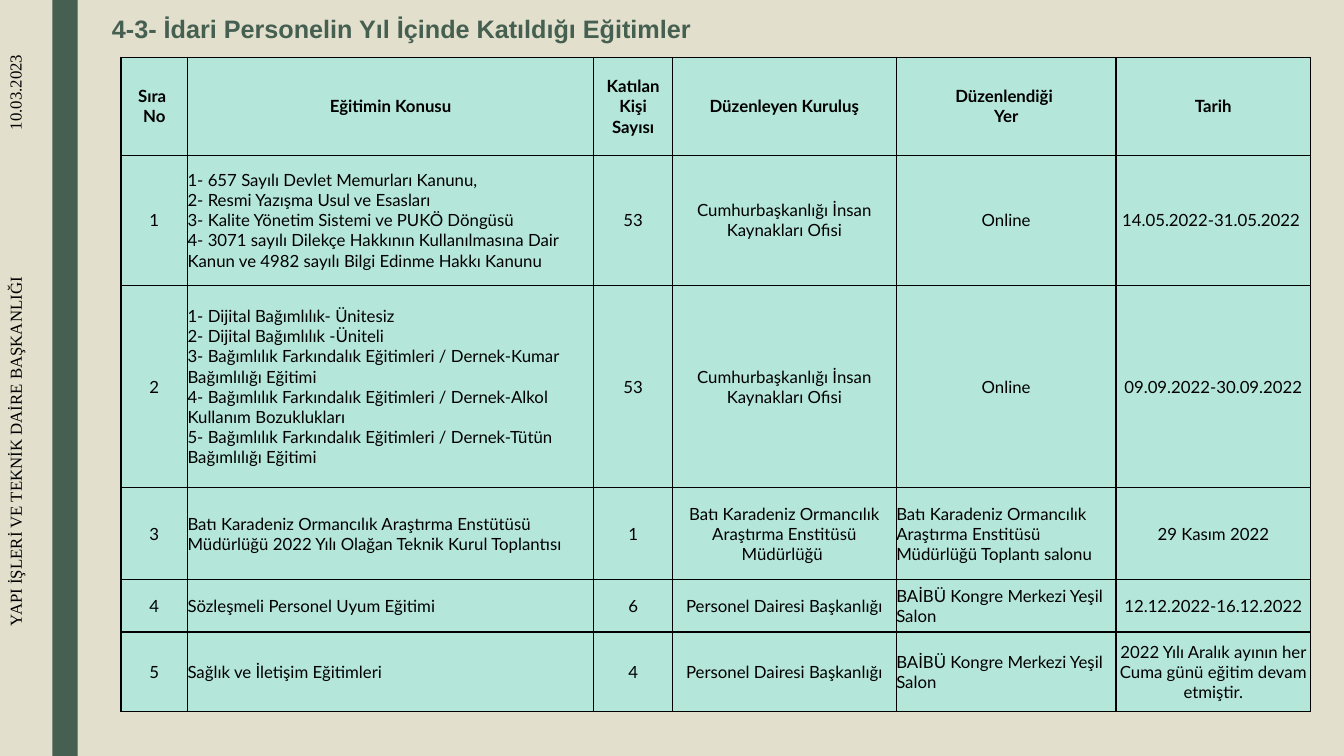
from lxml import etree
from pptx import Presentation, util as u
from pptx.dml.color import RGBColor
from pptx.enum import shapes, text
from pptx.oxml import ns

WIDTH, HEIGHT = u.Inches(13.33), u.Inches(7.5)
GREEN, MINT, SAND, BLACK = "455F51", "B4E6DA", "E2DFCC", "000000"
COLUMNS = [0.66, 4.03, 0.78, 2.22, 2.18, 1.93]
ROWS = [0.97, 1.29, 2.01, 0.91, 0.52, 0.79]

OFFICE = "Cumhurbaşkanlığı İnsan Kaynakları Ofisi"
PERSONNEL = "Personel Dairesi Başkanlığı"
HALL = "BAİBÜ Kongre Merkezi Yeşil Salon"
INSTITUTE = "Batı Karadeniz Ormancılık Araştırma Enstitüsü Müdürlüğü "
HEADER = ["Sıra \nNo", "Eğitimin Konusu", "Katılan\nKişi\nSayısı",
          "Düzenleyen Kuruluş", "Düzenlendiği \nYer", "Tarih"]
TRAININGS = [
    ["1", "1- 657 Sayılı Devlet Memurları Kanunu,\n"
          "2- Resmi Yazışma Usul ve Esasları\n"
          "3- Kalite Yönetim Sistemi ve PUKÖ Döngüsü\n"
          "4- 3071 sayılı Dilekçe Hakkının Kullanılmasına Dair Kanun ve "
          "4982 sayılı Bilgi Edinme Hakkı Kanunu",
     "53", OFFICE, "Online", "14.05.2022-31.05.2022 "],
    ["2", "1- Dijital Bağımlılık- Ünitesiz\n"
          "2- Dijital Bağımlılık -Üniteli\n"
          "3- Bağımlılık Farkındalık Eğitimleri / Dernek-Kumar Bağımlılığı Eğitimi\n"
          "4- Bağımlılık Farkındalık Eğitimleri / Dernek-Alkol Kullanım Bozuklukları\n"
          "5- Bağımlılık Farkındalık Eğitimleri / Dernek-Tütün Bağımlılığı Eğitimi",
     "53", OFFICE, "Online", "09.09.2022-30.09.2022"],
    ["3", "Batı Karadeniz Ormancılık Araştırma Enstütüsü Müdürlüğü "
          "2022 Yılı Olağan Teknik Kurul Toplantısı",
     "1", INSTITUTE, INSTITUTE + "Toplantı salonu", "29 Kasım 2022"],
    ["4", "Sözleşmeli Personel Uyum Eğitimi", "6", PERSONNEL, HALL,
     "12.12.2022-16.12.2022"],
    ["5", "Sağlık ve İletişim Eğitimleri", "4", PERSONNEL, HALL,
     "2022 Yılı Aralık ayının her Cuma günü eğitim devam etmiştir."],
]


def color(value):
    return RGBColor.from_string(value)


def paint(fill, value):
    fill.solid()
    fill.fore_color.rgb = color(value)


def write(paragraph, words, font, size, ink=BLACK, bold=False, centered=False):
    """Add one run per line, with line breaks between them."""
    paragraph.alignment = text.PP_ALIGN.CENTER if centered else text.PP_ALIGN.LEFT
    for number, line in enumerate(words.split("\n")):
        if number:
            paragraph.add_line_break()
        run = paragraph.add_run()
        run.text = line
        run.font.name, run.font.size, run.font.bold = font, u.Pt(size), bold
        run.font.color.rgb = color(ink)


def add_title(slide, words):
    title = slide.shapes.title
    title.left, title.top = u.Inches(1.01), u.Inches(0.12)
    title.width, title.height = u.Inches(10.5), u.Inches(0.66)
    frame = title.text_frame
    frame.word_wrap = True
    frame.auto_size = text.MSO_AUTO_SIZE.NONE
    frame.vertical_anchor = text.MSO_ANCHOR.TOP
    frame.paragraphs[0].line_spacing = 0.89
    write(frame.paragraphs[0], words, "Arial", 18, GREEN, bold=True)


def add_band(slide):
    band = slide.shapes.add_shape(shapes.MSO_SHAPE.RECTANGLE,
                                  u.Inches(0.52), 0, u.Inches(0.25), HEIGHT)
    band.shadow.inherit = False
    paint(band.fill, GREEN)
    band.line.fill.background()


def add_side_text(slide, words, left, top, width, height):
    box = slide.shapes.add_textbox(*map(u.Inches, (left, top, width, height)))
    box.rotation = 270
    box.text_frame.word_wrap = True
    write(box.text_frame.paragraphs[0], words, "Times New Roman", 12)


def add_borders(cell):
    properties = cell._tc.get_or_add_tcPr()
    for position, side in enumerate(("lnL", "lnR", "lnT", "lnB")):
        line = etree.Element(ns.qn("a:" + side), w=str(u.Pt(1)))
        solid = etree.SubElement(line, ns.qn("a:solidFill"))
        etree.SubElement(solid, ns.qn("a:srgbClr"), val=BLACK)
        properties.insert(position, line)


def fill_cell(cell, words, bold, centered):
    cell.margin_left = cell.margin_right = cell.margin_top = cell.margin_bottom = 0
    cell.vertical_anchor = text.MSO_ANCHOR.MIDDLE
    paint(cell.fill, MINT)
    add_borders(cell)
    write(cell.text_frame.paragraphs[0], words, "Lato", 12, bold=bold, centered=centered)


def add_training_table(slide):
    table = slide.shapes.add_table(
        len(ROWS), len(COLUMNS), u.Inches(1.2), u.Inches(0.57),
        u.Inches(sum(COLUMNS)), u.Inches(sum(ROWS))).table
    for column, width in zip(table.columns, COLUMNS):
        column.width = u.Inches(width)
    for row, height in zip(table.rows, ROWS):
        row.height = u.Inches(height)
    for r, record in enumerate([HEADER] + TRAININGS):
        for c, words in enumerate(record):
            # Topics and the longer venues are set flush left
            flush_left = r > 0 and (c == 1 or (c == 4 and words != "Online"))
            fill_cell(table.cell(r, c), words, bold=r == 0, centered=not flush_left)


def main():
    presentation = Presentation()
    presentation.slide_width, presentation.slide_height = WIDTH, HEIGHT
    slide = presentation.slides.add_slide(presentation.slide_layouts[5])
    paint(slide.background.fill, SAND)

    # Side strip
    add_band(slide)
    add_side_text(slide, "10.03.2023", -0.55, 0.4, 1.54, 0.44)
    add_side_text(slide, "YAPI İŞLERİ VE TEKNİK DAİRE BAŞKANLIĞI", -2.2, 3.86, 4.65, 0.25)

    # Content
    add_title(slide, "4-3- İdari Personelin Yıl İçinde Katıldığı Eğitimler")
    add_training_table(slide)
    presentation.save("out.pptx")


if __name__ == "__main__":
    main()
